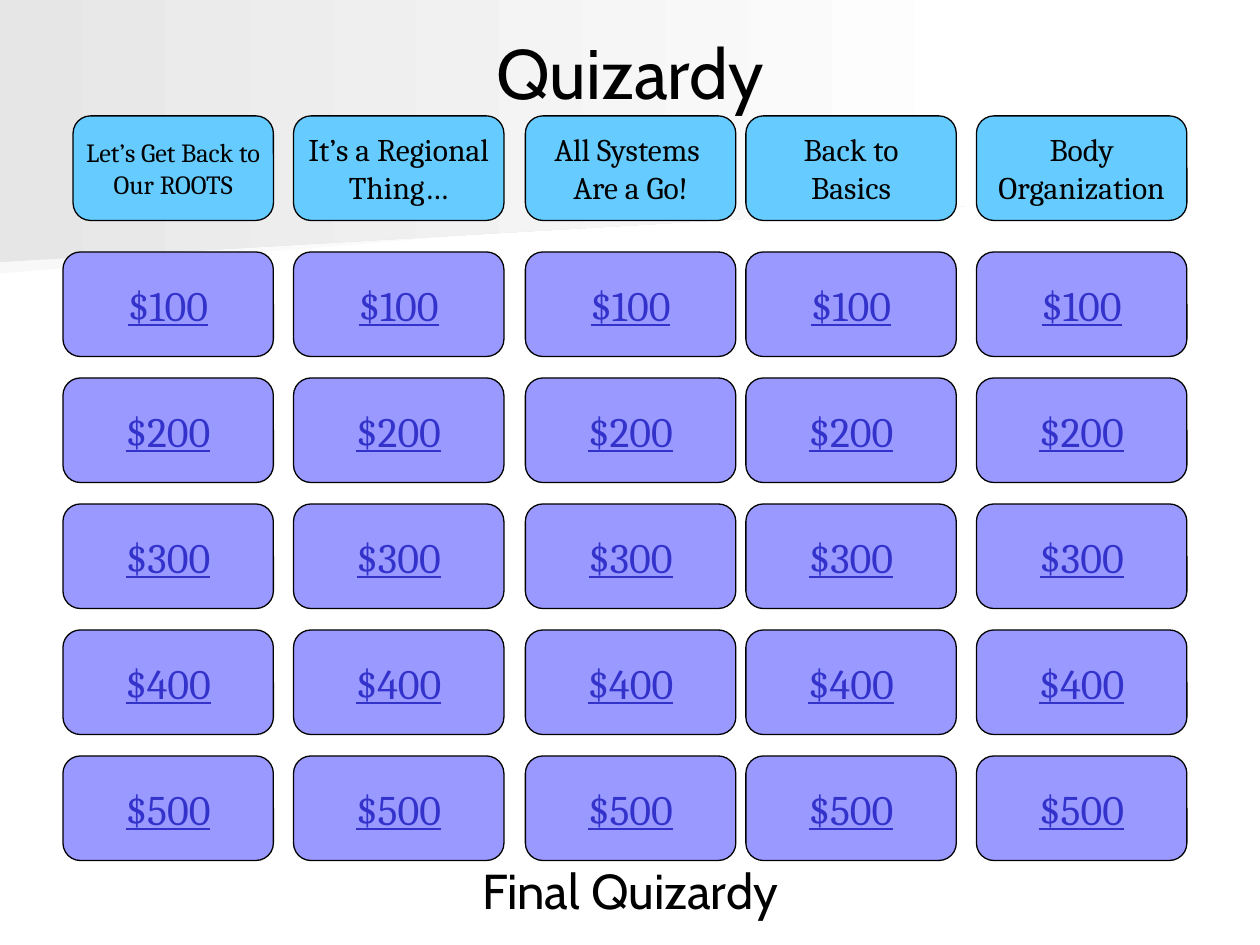
"""Build a quiz board slide with five topics and five prize rows."""
from dataclasses import dataclass

from pptx import Presentation
from pptx.dml.color import RGBColor
from pptx.enum.shapes import MSO_SHAPE
from pptx.enum.text import MSO_ANCHOR, PP_ALIGN
from pptx.util import Inches, Pt

CARD = MSO_SHAPE.FLOWCHART_ALTERNATE_PROCESS
MIDDLE = MSO_ANCHOR.MIDDLE
CENTER = PP_ALIGN.CENTER

BLACK = RGBColor(0x00, 0x00, 0x00)
WHITE = RGBColor(0xFF, 0xFF, 0xFF)
SKY = RGBColor(0x66, 0xCC, 0xFF)
LILAC = RGBColor(0x99, 0x99, 0xFF)
INDIGO = RGBColor(0x33, 0x33, 0xCC)
PALE = RGBColor(0xF8, 0xF8, 0xF8)
GREY = RGBColor(0xE6, 0xE6, 0xE6)

WIDE, HIGH = 1.67, 0.83
HEAD_TOP, ROW_TOP, ROW_STEP = 0.92, 2, 1


@dataclass(frozen=True)
class Style:
    size: float
    font: str
    color: RGBColor = BLACK
    under: bool = False


@dataclass(frozen=True)
class Topic:
    left: float
    lines: tuple[str, ...]
    size: float = 18
    inset: float = 0


@dataclass(frozen=True)
class Wedge:
    points: tuple[tuple[float, float], ...]
    color: RGBColor


@dataclass(frozen=True)
class Label:
    text: str
    top: float
    size: float


TOPICS = (
    Topic(0.5, ("Let’s Get Back to", "Our ROOTS"), 15, 0.08),
    Topic(2.33, ("It’s a Regional", "Thing…")),
    Topic(4.17, ("All Systems ", "Are a Go!")),
    Topic(5.92, ("Back to", "Basics")),
    Topic(7.75, ("Body", "Organization")),
)
PRIZES = ("$100", "$200", "$300", "$400", "$500")
PRIZE = Style(24, "Cambria", INDIGO, True)
WEDGES = (
    Wedge(((7.78, 1.53), (0, 2.17), (0, 1.01), (7.79, 1.01), (7.78, 1.28)), PALE),
    Wedge(((7.92, 1.62), (0, 2.08), (0, 0), (7.92, 0)), GREY),
)
LABELS = (Label("Quizardy", 0.3, 40), Label("Final Quizardy", 6.8, 28))


def write(frame, lines: tuple[str, ...], style: Style) -> None:
    """Write centred lines into a text frame."""
    frame.vertical_anchor = MIDDLE
    for row, line in enumerate(lines):
        para = frame.add_paragraph() if row else frame.paragraphs[0]
        para.alignment = CENTER
        run = para.add_run()
        run.text = line
        font = run.font
        font.size = Pt(style.size)
        font.name = style.font
        font.color.rgb = style.color
        if style.under:
            font.underline = True


def add_wedge(slide, wedge: Wedge) -> None:
    """Draw a backdrop wedge that fades to white."""
    first, *rest = [(Inches(x), Inches(y)) for x, y in wedge.points]
    pen = slide.shapes.build_freeform(*first)
    pen.add_line_segments(rest)
    shape = pen.convert_to_shape()
    shape.shadow.inherit = False
    shape.line.fill.background()
    shape.fill.gradient()
    shape.fill.gradient_angle = 0
    for stop, color in zip(shape.fill.gradient_stops, (wedge.color, WHITE)):
        stop.color.rgb = color


def add_label(slide, label: Label) -> None:
    """Draw a centred line of text across the slide."""
    box = slide.shapes.add_textbox(Inches(0.5), Inches(label.top), Inches(9), Inches(0.53))
    box.text_frame.word_wrap = True
    write(box.text_frame, (label.text,), Style(label.size, "Cabin"))


def add_card(slide, left: float, top: float, wide: float, fill: RGBColor,
             lines: tuple[str, ...], style: Style) -> None:
    """Draw a rounded card with its text."""
    card = slide.shapes.add_shape(CARD, Inches(left), Inches(top), Inches(wide), Inches(HIGH))
    card.shadow.inherit = False
    card.fill.solid()
    card.fill.fore_color.rgb = fill
    card.line.color.rgb = BLACK
    card.line.width = Pt(0.75)
    card.text_frame.word_wrap = False
    write(card.text_frame, lines, style)


def add_topic(slide, topic: Topic) -> None:
    """Draw a topic heading and its column of prizes."""
    add_card(slide, topic.left + topic.inset, HEAD_TOP, WIDE - topic.inset, SKY,
             topic.lines, Style(topic.size, "Cambria"))
    for row, prize in enumerate(PRIZES):
        add_card(slide, topic.left, ROW_TOP + row * ROW_STEP, WIDE, LILAC, (prize,), PRIZE)


def main() -> None:
    """Build and save the slide."""
    deck = Presentation()
    deck.slide_width, deck.slide_height = Inches(10), Inches(7.5)
    slide = deck.slides.add_slide(deck.slide_layouts[6])
    for wedge in WEDGES:
        add_wedge(slide, wedge)
    for label in LABELS:
        add_label(slide, label)
    for topic in TOPICS:
        add_topic(slide, topic)
    deck.save("out.pptx")


if __name__ == "__main__":
    main()
